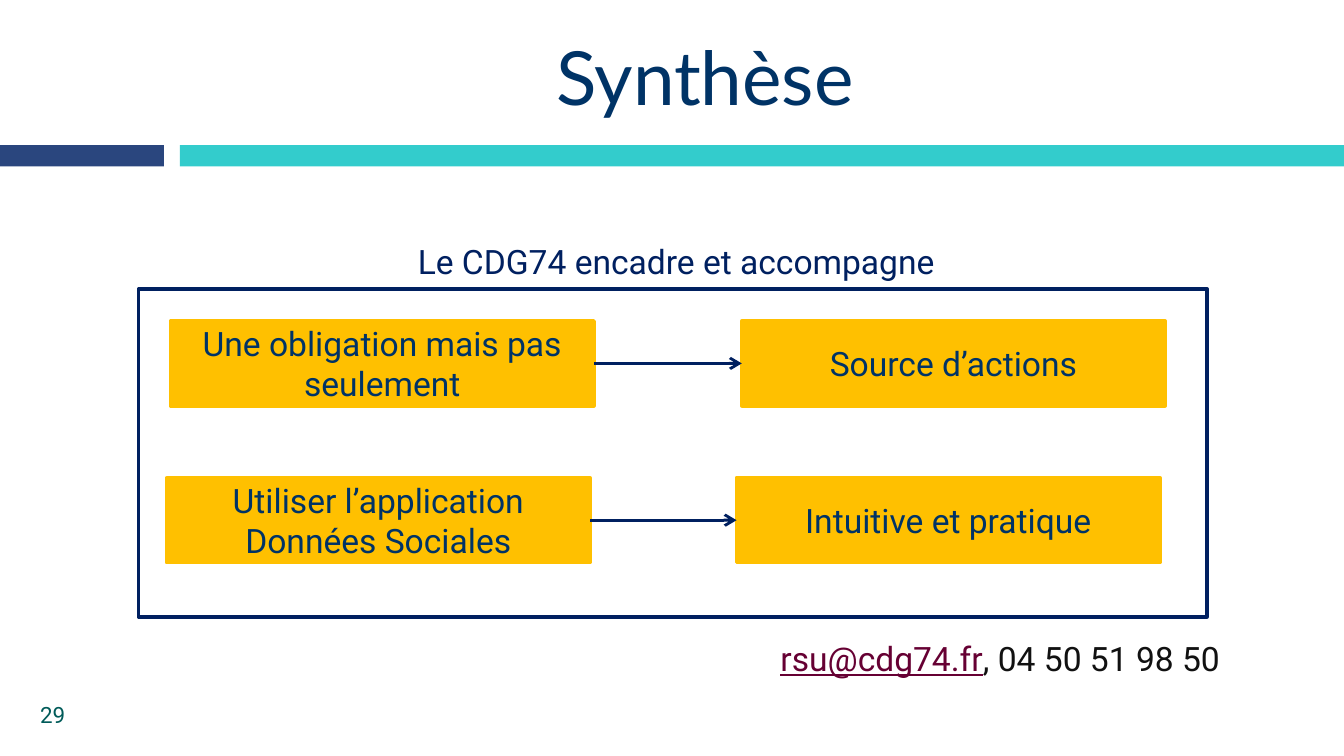
from typing import NamedTuple

from lxml.etree import SubElement
from pptx import Presentation
from pptx.dml.color import RGBColor
from pptx.enum.shapes import MSO_CONNECTOR, MSO_SHAPE
from pptx.enum.text import MSO_ANCHOR, PP_ALIGN
from pptx.oxml.ns import qn
from pptx.util import Pt

COLORS = {
    "turquoise": "33CCCC",
    "blue": "2A467E",
    "navy": "002060",
    "ink": "003366",
    "amber": "FFC000",
    "teal": "005B59",
    "link": "660033",
    "black": "111111",
}
BOX_WIDTH, BOX_HEIGHT = 226.8, 45.4


class Area(NamedTuple):
    left: float
    top: float
    width: float
    height: float


class Step(NamedTuple):
    cause: str
    effect: str
    cause_left: float
    effect_left: float
    top: float


class Words(NamedTuple):
    text: str
    color: str
    size: float = 18
    font: str = "Roboto"
    underline: bool = False


STEPS = [
    Step("Une obligation mais pas seulement", "Source d’actions", 91.4, 397.4, 172),
    Step("Utiliser l’application Données Sociales", "Intuitive et pratique", 89.3, 394.6, 256),
]


def rgb(color: str) -> RGBColor:
    return RGBColor.from_string(COLORS[color])


def in_points(area: Area) -> list:
    return [Pt(length) for length in area]


def add_words(paragraph, *parts: Words) -> None:
    for part in parts:
        run = paragraph.add_run()
        run.text = part.text
        run.font.name = part.font
        run.font.size = Pt(part.size)
        run.font.color.rgb = rgb(part.color)
        if part.underline:
            run.font.underline = True


def add_rectangle(slide, area: Area, fill: str | None = None, line: str | None = None):
    rectangle = slide.shapes.add_shape(MSO_SHAPE.RECTANGLE, *in_points(area))
    rectangle.shadow.inherit = False
    if fill:
        rectangle.fill.solid()
        rectangle.fill.fore_color.rgb = rgb(fill)
    else:
        rectangle.fill.background()
    if line:
        rectangle.line.color.rgb = rgb(line)
        rectangle.line.width = Pt(2)
    else:
        rectangle.line.fill.background()
    return rectangle


def add_box(slide, left: float, top: float, text: str):
    box = add_rectangle(slide, Area(left, top, BOX_WIDTH, BOX_HEIGHT), "amber", "amber")
    box.text_frame.word_wrap = True
    box.text_frame.vertical_anchor = MSO_ANCHOR.MIDDLE
    paragraph = box.text_frame.paragraphs[0]
    paragraph.alignment = PP_ALIGN.CENTER
    add_words(paragraph, Words(text, "ink"))
    return box


def add_arrow(slide, start, end) -> None:
    """Join the right side of start to the left side of end."""
    arrow = slide.shapes.add_connector(MSO_CONNECTOR.STRAIGHT, 0, 0, 0, 0)
    arrow.begin_connect(start, 3)
    arrow.end_connect(end, 1)
    arrow.line.color.rgb = rgb("navy")
    arrow.line.width = Pt(1.5)
    SubElement(arrow.line._get_or_add_ln(), qn("a:tailEnd"), type="arrow")
    SubElement(arrow._element.spPr, qn("a:effectLst"))


def add_label(slide, area: Area, *parts: Words, anchor=MSO_ANCHOR.TOP) -> None:
    label = slide.shapes.add_textbox(*in_points(area)).text_frame
    label.word_wrap = True
    label.vertical_anchor = anchor
    add_words(label.paragraphs[0], *parts)


def set_title(slide, area: Area, words: Words) -> None:
    title = slide.shapes.title
    title.left, title.top, title.width, title.height = in_points(area)
    title.text_frame.vertical_anchor = MSO_ANCHOR.MIDDLE
    paragraph = title.text_frame.paragraphs[0]
    paragraph.alignment = PP_ALIGN.CENTER
    paragraph._p.get_or_add_pPr().set("marL", str(Pt(35.3)))
    add_words(paragraph, words)


def main() -> None:
    deck = Presentation()
    deck.slide_width, deck.slide_height = Pt(720), Pt(405)
    slide = deck.slides.add_slide(deck.slide_layouts[5])

    add_rectangle(slide, Area(96.4, 77.8, 623.6, 11.3), "turquoise")
    add_rectangle(slide, Area(0, 77.8, 87.8, 11.3), "blue")
    set_title(slide, Area(42.5, 10, 635, 61.2), Words("Synthèse", "ink", 40, "Lato"))

    for step in STEPS:
        cause = add_box(slide, step.cause_left, step.top, step.cause)
        effect = add_box(slide, step.effect_left, step.top, step.effect)
        add_arrow(slide, cause, effect)
    add_rectangle(slide, Area(74.2, 154.8, 572.4, 175.7), line="navy")

    add_label(slide, Area(216.7, 125.3, 291.6, 28.8),
              Words("Le CDG74 encadre et accompagne", "navy"))
    add_label(slide, Area(411, 338.4, 300, 28.8),
              Words("rsu@cdg74.fr", "link", underline=True),
              Words(", 04 50 51 98 50", "black"))
    add_label(slide, Area(14.4, 372.2, 167.8, 21.6), Words("29", "teal", 12),
              anchor=MSO_ANCHOR.MIDDLE)
    deck.save("out.pptx")


if __name__ == "__main__":
    main()
